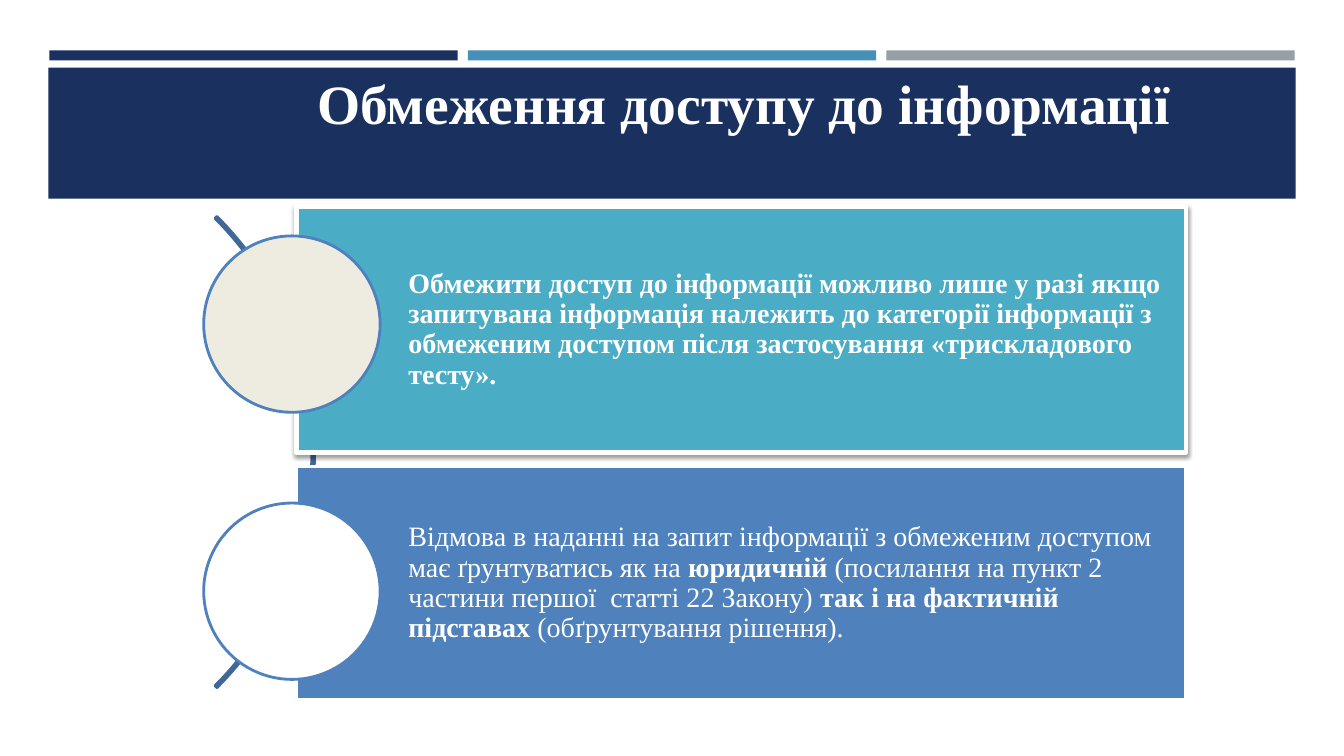
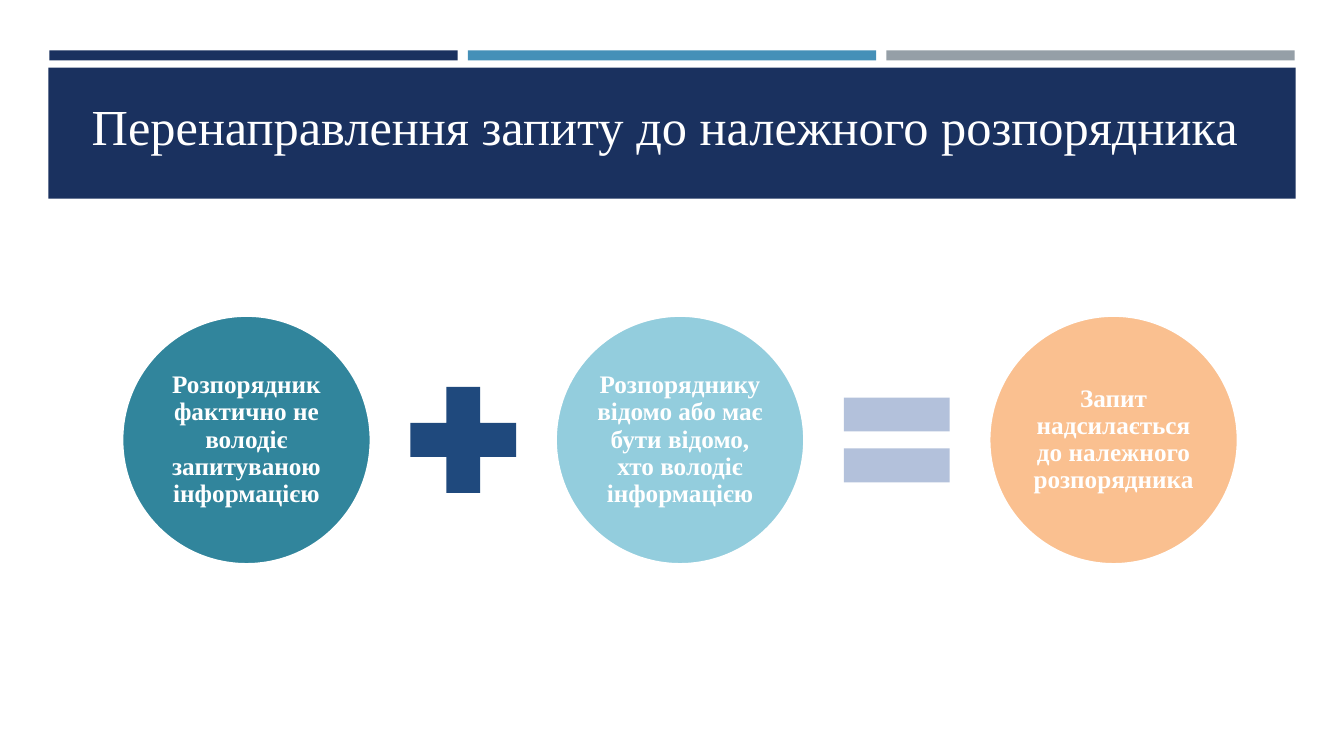
from lxml import etree
from pptx import Presentation
from pptx.dml.color import RGBColor
from pptx.enum.shapes import MSO_SHAPE
from pptx.enum.text import MSO_ANCHOR, PP_ALIGN
from pptx.oxml.ns import qn
from pptx.util import Inches, Pt

FONT = "Times New Roman"
NAVY, WHITE, BLUE = "1A315F", "FFFFFF", "4F81BD"

# Top strips: left edges follow from equal width and gap
STRIP_COLORS = [NAVY, "4590B8", "959FA7"]
STRIP_LEFT, STRIP_WIDTH, STRIP_GAP = 0.49, 4.05, 0.1

# Each title: text, box (left, top, width, height), size, bold
RESTRICTION_TITLE = ("Обмеження доступу до інформації", (2.28, 0.76, 10.19, 0.57), 39.6, True)
REDIRECT_TITLE = ("Перенаправлення запиту до належного розпорядника", (0.65, 1.01, 11.89, 0.48), 36, False)

# Each panel: top, height, fill, line width, shadow, circle top, circle fill, runs (text, bold)
PANELS = [
    (2.05, 2.44, "4BACC6", 3, True, 2.34, "EEECE1", [
        ("Обмежити доступ до інформації можливо лише у разі якщо запитувана "
         "інформація належить до категорії інформації з обмеженим доступом "
         "після застосування «трискладового тесту».", True),
    ]),
    (4.63, 2.31, BLUE, 2, False, 4.99, WHITE, [
        ("Відмова в наданні на запит інформації з обмеженим доступом має "
         "ґрунтуватись як на ", False),
        ("юридичній", True),
        (" (посилання на пункт 2 частини першої  статті 22 Закону) ", False),
        ("так і на фактичній підставах ", True),
        ("(обґрунтування рішення).", False),
    ]),
]

CONDITIONS = [
    ("Розпорядник фактично не володіє запитуваною інформацією", "31859C"),
    ("Розпоряднику відомо або має бути відомо, хто володіє інформацією", "93CDDD"),
    ("Запит надсилається до належного розпорядника", "FAC090"),
]
SIGNS = [(MSO_SHAPE.MATH_PLUS, "1F497D"), (MSO_SHAPE.MATH_EQUAL, "B3C1DB")]
EQUATION_LEFT, EQUATION_MIDDLE = 1.21, 4.365
CONDITION_SIZE, SIGN_SIZE, EQUATION_GAP = 2.47, 1.43, 0.2


def rgb(color):
    return RGBColor.from_string(color)


def add_shape(slide, kind, box, fill=None, line=None, line_width=2):
    shape = slide.shapes.add_shape(kind, *map(Inches, box))
    shape.shadow.inherit = False
    if fill:
        shape.fill.solid()
        shape.fill.fore_color.rgb = rgb(fill)
    else:
        shape.fill.background()
    if line:
        shape.line.color.rgb = rgb(line)
        shape.line.width = Pt(line_width)
    else:
        shape.line.fill.background()
    return shape


def add_soft_shadow(shape):
    effects = shape._element.spPr.find(qn("a:effectLst"))
    shadow = etree.SubElement(effects, qn("a:outerShdw"), blurRad="40000",
                              dist="20000", dir="5400000", rotWithShape="0")
    color = etree.SubElement(shadow, qn("a:srgbClr"), val="000000")
    etree.SubElement(color, qn("a:alpha"), val="38000")


def write_text(shape, runs, size, align, insets, anchor=MSO_ANCHOR.MIDDLE):
    """Fill the shape with one white paragraph; insets are left, top, right, bottom."""
    frame = shape.text_frame
    frame.word_wrap = True
    frame.vertical_anchor = anchor
    (frame.margin_left, frame.margin_top,
     frame.margin_right, frame.margin_bottom) = map(Inches, insets)
    paragraph = frame.paragraphs[0]
    paragraph.alignment = align
    paragraph.line_spacing = 0.9
    for text, bold in runs:
        run = paragraph.add_run()
        run.text = text
        run.font.name = FONT
        run.font.size = Pt(size)
        run.font.bold = bold
        run.font.color.rgb = rgb(WHITE)


def add_titled_slide(presentation, title):
    slide = presentation.slides.add_slide(presentation.slide_layouts[6])
    for index, color in enumerate(STRIP_COLORS):
        left = STRIP_LEFT + index * (STRIP_WIDTH + STRIP_GAP)
        add_shape(slide, MSO_SHAPE.RECTANGLE, (left, 0.5, STRIP_WIDTH, 0.1), color)
    add_shape(slide, MSO_SHAPE.RECTANGLE, (0.48, 0.67, 12.37, 1.3), NAVY)
    text, box, size, bold = title
    title_box = slide.shapes.add_textbox(*map(Inches, box))
    write_text(title_box, [(text, bold)], size, PP_ALIGN.CENTER, (0, 0, 0, 0), MSO_ANCHOR.TOP)
    return slide


def build_restriction_slide(presentation):
    slide = add_titled_slide(presentation, RESTRICTION_TITLE)
    arc = add_shape(slide, MSO_SHAPE.BLOCK_ARC, (-3.49, 1.18, 6.61, 6.61), line="3F6797")
    # Angles of 315 and 45 degrees, then the thickness
    for index, value in enumerate((189, 27, 0.004)):
        arc.adjustments[index] = value
    for top, height, fill, line_width, shadow, circle_top, circle_fill, runs in PANELS:
        panel = add_shape(slide, MSO_SHAPE.RECTANGLE, (2.94, top, 8.82, height),
                          fill, WHITE, line_width)
        if shadow:
            add_soft_shadow(panel)
        write_text(panel, runs, 20, PP_ALIGN.LEFT, (1.11, 0.06, 0.06, 0.06))
        add_shape(slide, MSO_SHAPE.OVAL, (2.02, circle_top, 1.75, 1.75), circle_fill, BLUE)


def build_redirect_slide(presentation):
    slide = add_titled_slide(presentation, REDIRECT_TITLE)
    step = CONDITION_SIZE + SIGN_SIZE + 2 * EQUATION_GAP
    condition_top = EQUATION_MIDDLE - CONDITION_SIZE / 2
    sign_top = EQUATION_MIDDLE - SIGN_SIZE / 2
    for index, (text, fill) in enumerate(CONDITIONS):
        left = EQUATION_LEFT + index * step
        circle = add_shape(slide, MSO_SHAPE.OVAL,
                           (left, condition_top, CONDITION_SIZE, CONDITION_SIZE), fill, WHITE)
        write_text(circle, [(text, True)], 18, PP_ALIGN.CENTER, (0.03, 0.03, 0.03, 0.03))
        if index < len(SIGNS):
            kind, color = SIGNS[index]
            sign_left = left + CONDITION_SIZE + EQUATION_GAP
            add_shape(slide, kind, (sign_left, sign_top, SIGN_SIZE, SIGN_SIZE), color)


def main():
    presentation = Presentation()
    presentation.slide_width = Inches(13.33)
    presentation.slide_height = Inches(7.5)
    build_restriction_slide(presentation)
    build_redirect_slide(presentation)
    presentation.save("out.pptx")


if __name__ == "__main__":
    main()
